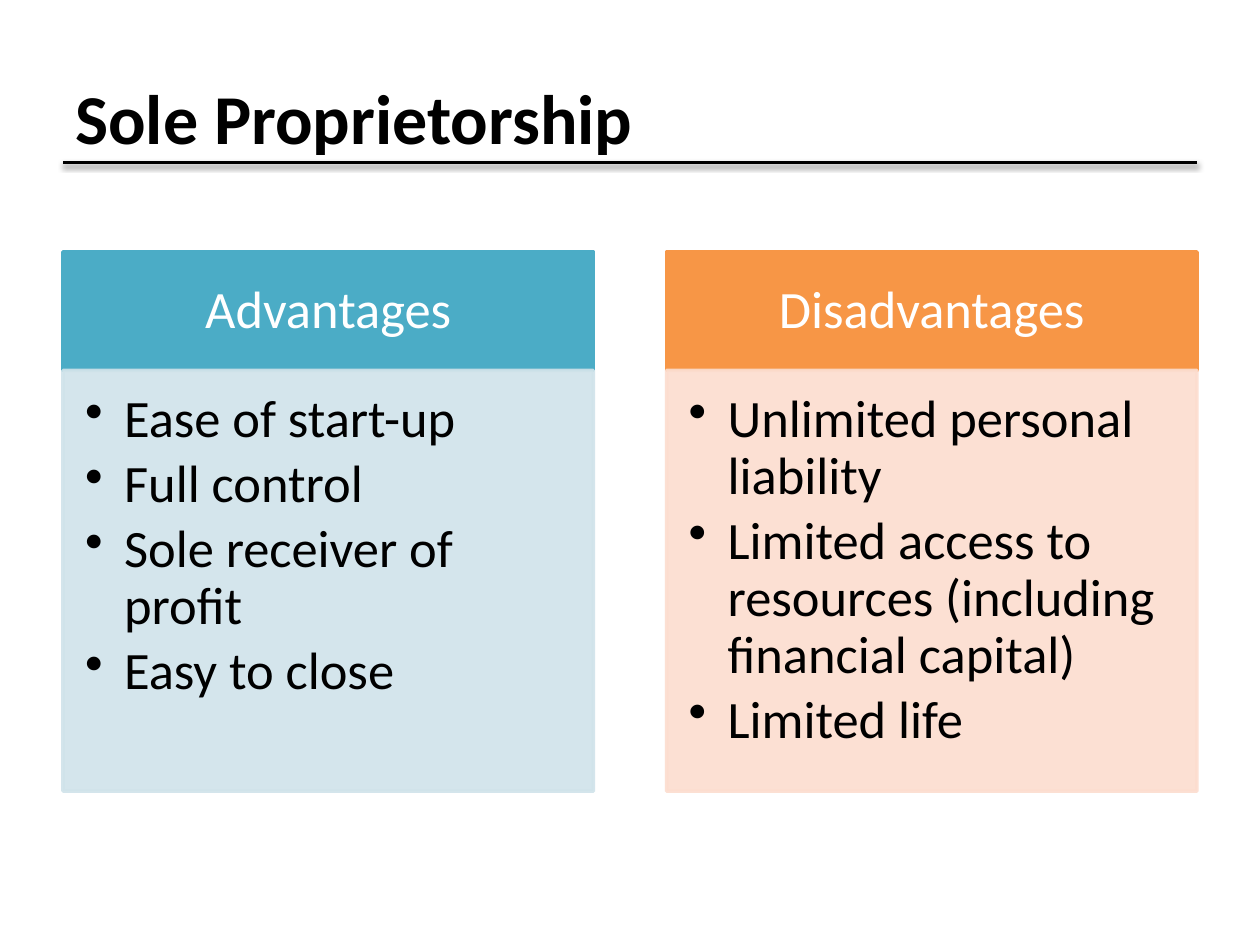
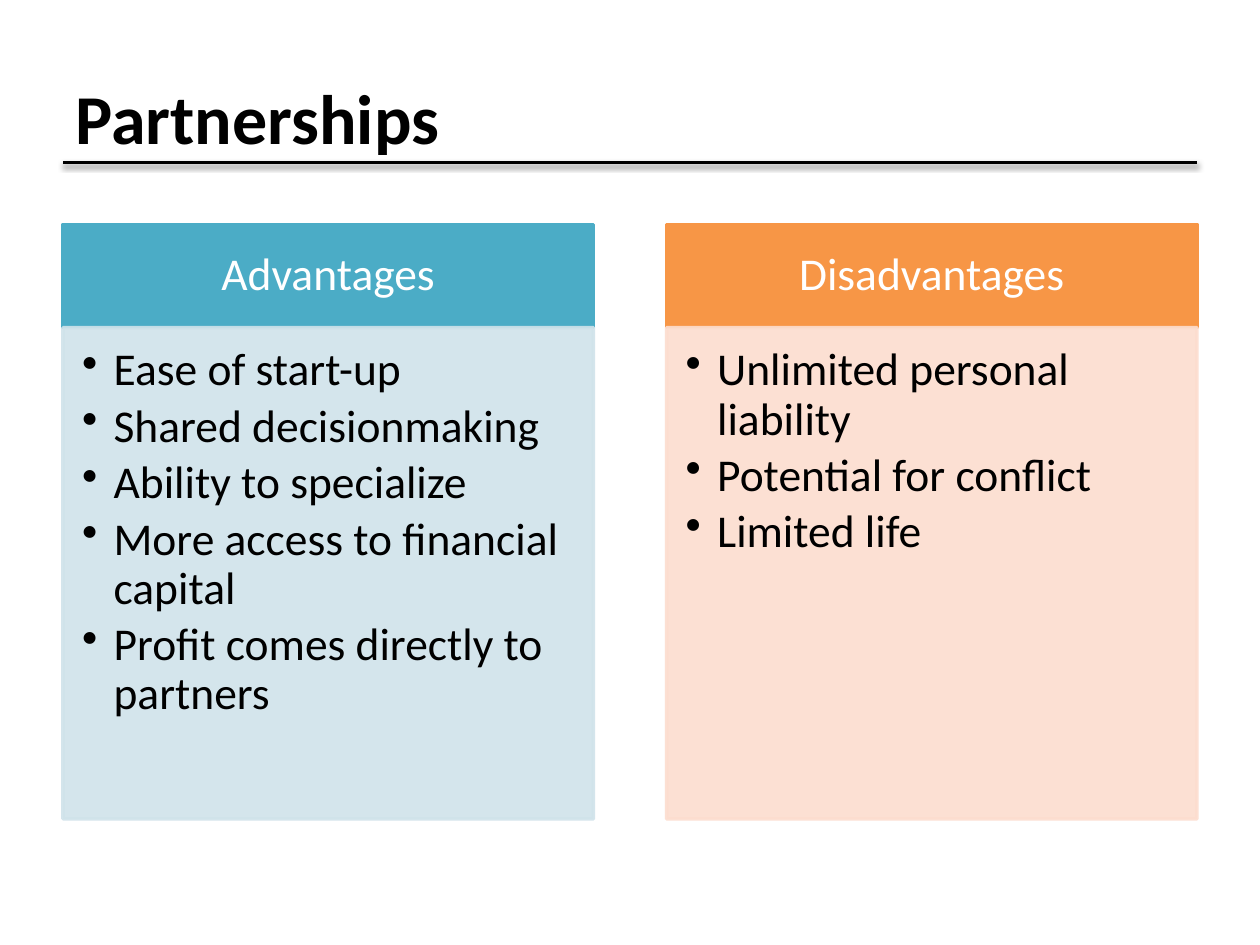
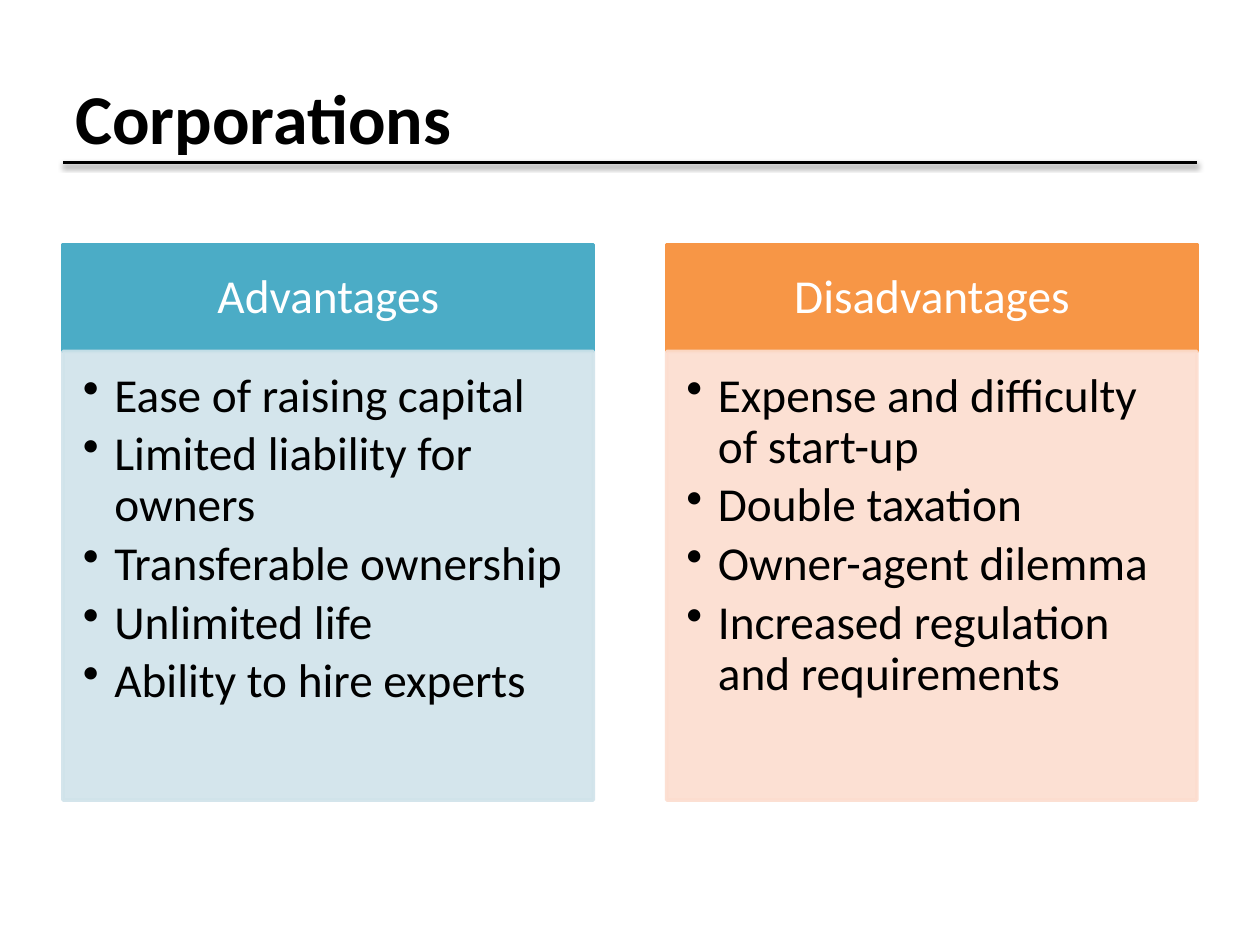
"""Build three slides weighing the advantages and disadvantages of business structures."""
from lxml.etree import SubElement
from pptx import Presentation
from pptx.dml.color import RGBColor
from pptx.enum.shapes import MSO_CONNECTOR, MSO_SHAPE
from pptx.enum.text import MSO_ANCHOR, PP_ALIGN
from pptx.oxml.ns import qn
from pptx.util import Inches, Pt

COLORS = {
    "ink": "000000",
    "white": "FFFFFF",
    "teal": "4BACC6",
    "pale_teal": "D0E3EA",
    "orange": "F79646",
    "pale_orange": "FCDDCF",
}
MARGIN, CONTENT_WIDTH, COLUMN_WIDTH = 0.5, 9, 4.21
COLUMNS = [
    ("Advantages", MARGIN, "teal", "pale_teal"),
    ("Disadvantages", MARGIN + CONTENT_WIDTH - COLUMN_WIDTH, "orange", "pale_orange"),
]
STRUCTURES = [
    {
        "title": "Sole Proprietorship",
        "top": 2, "heading_height": 0.94, "list_height": 3.34, "size": 30, "indent": 0.31,
        "Advantages": ["Ease of start-up", "Full control", "Sole receiver of profit", "Easy to close"],
        "Disadvantages": [
            "Unlimited personal liability",
            "Limited access to resources (including financial capital)",
            "Limited life",
        ],
    },
    {
        "title": "Partnerships",
        "top": 1.78, "heading_height": 0.82, "list_height": 3.9, "size": 26, "indent": 0.25,
        "Advantages": [
            "Ease of start-up",
            "Shared decisionmaking",
            "Ability to specialize",
            "More access to financial capital",
            "Profit comes directly to partners",
        ],
        "Disadvantages": ["Unlimited personal liability", "Potential for conflict", "Limited life"],
    },
    {
        "title": "Corporations",
        "top": 1.94, "heading_height": 0.85, "list_height": 3.56, "size": 27, "indent": 0.25,
        "Advantages": [
            "Ease of raising capital",
            "Limited liability for owners",
            "Transferable ownership",
            "Unlimited life",
            "Ability to hire experts",
        ],
        "Disadvantages": [
            "Expense and difficulty of start-up",
            "Double taxation",
            "Owner-agent dilemma",
            "Increased regulation and requirements",
        ],
    },
]


def add_panel(slide, left, top, height, color, insets, anchor):
    panel = slide.shapes.add_shape(
        MSO_SHAPE.RECTANGLE, Inches(left), Inches(top), Inches(COLUMN_WIDTH), Inches(height)
    )
    panel.shadow.inherit = False
    panel.fill.solid()
    for paint in (panel.fill.fore_color, panel.line.color):
        paint.rgb = RGBColor.from_string(COLORS[color])
    panel.line.width = Pt(2)
    frame = panel.text_frame
    sides = ("margin_left", "margin_top", "margin_right", "margin_bottom")
    settings = dict(zip(sides, map(Pt, insets)), word_wrap=True, vertical_anchor=anchor)
    for name, value in settings.items():
        setattr(frame, name, value)
    return panel


def write(paragraph, text, size, color, **layout):
    paragraph.text = text
    for name, value in layout.items():
        setattr(paragraph, name, value)
    font = paragraph.runs[0].font
    for name, value in {"name": "Calibri", "size": Pt(size)}.items():
        setattr(font, name, value)
    font.color.rgb = RGBColor.from_string(COLORS[color])
    return font


prs = Presentation()
prs.slide_width, prs.slide_height = Inches(10), Inches(7.5)

for structure in STRUCTURES:
    slide = prs.slides.add_slide(prs.slide_layouts[6])

    rule = slide.shapes.add_connector(
        MSO_CONNECTOR.STRAIGHT, Inches(MARGIN), Inches(1.29), Inches(MARGIN + CONTENT_WIDTH), Inches(1.29)
    )
    rule.line.width = Pt(2)
    rule.line.color.rgb = RGBColor.from_string(COLORS["ink"])
    effects = SubElement(rule._element.spPr, qn("a:effectLst"))
    shadow = SubElement(
        effects, qn("a:outerShdw"), blurRad=str(Pt(3.1)), dist=str(Pt(1.6)), dir="5400000", rotWithShape="0"
    )
    shade = SubElement(shadow, qn("a:srgbClr"), val=COLORS["ink"])
    SubElement(shade, qn("a:alpha"), val="38000")

    title = slide.shapes.add_textbox(Inches(MARGIN), Inches(0.3), Inches(CONTENT_WIDTH), Inches(1.25)).text_frame
    title.word_wrap = True
    title.vertical_anchor = MSO_ANCHOR.MIDDLE
    write(title.paragraphs[0], structure["title"], 40, "ink").bold = True

    size, top, heading_height = structure["size"], structure["top"], structure["heading_height"]
    side, edge, base, heading_edge = (size * ratio for ratio in (0.56, 0.42, 0.63, 0.32))
    for heading, left, strong, pale in COLUMNS:
        heading_panel = add_panel(
            slide, left, top, heading_height, strong, (side, heading_edge, side, heading_edge), MSO_ANCHOR.MIDDLE
        )
        write(
            heading_panel.text_frame.paragraphs[0], heading, size, "white",
            alignment=PP_ALIGN.CENTER, line_spacing=0.9,
        )

        points_panel = add_panel(
            slide, left, top + heading_height, structure["list_height"], pale,
            (edge, edge, side, base), MSO_ANCHOR.TOP,
        )
        for paint in list(points_panel._element.spPr.iter(qn("a:srgbClr"))):
            SubElement(paint, qn("a:alpha"), val="90000")
        points = points_panel.text_frame
        for index, point in enumerate(structure[heading]):
            paragraph = points.add_paragraph() if index else points.paragraphs[0]
            properties = paragraph._p.get_or_add_pPr()
            indent = Inches(structure["indent"])
            properties.set("marL", str(indent))
            properties.set("indent", str(-indent))
            SubElement(properties, qn("a:buChar"), char="•")
            write(
                paragraph, point, size, "ink",
                alignment=PP_ALIGN.LEFT, line_spacing=0.9, space_after=Pt(size * 0.16),
            )

prs.save("out.pptx")
